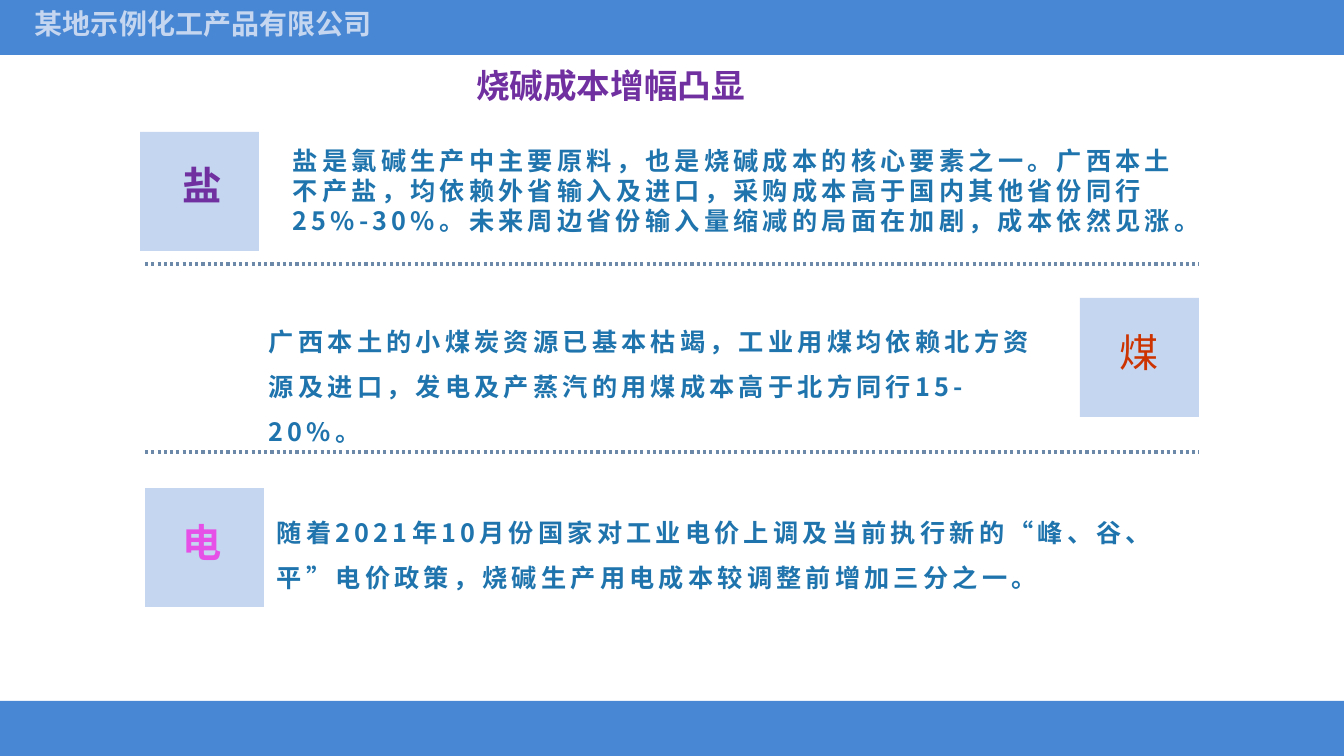
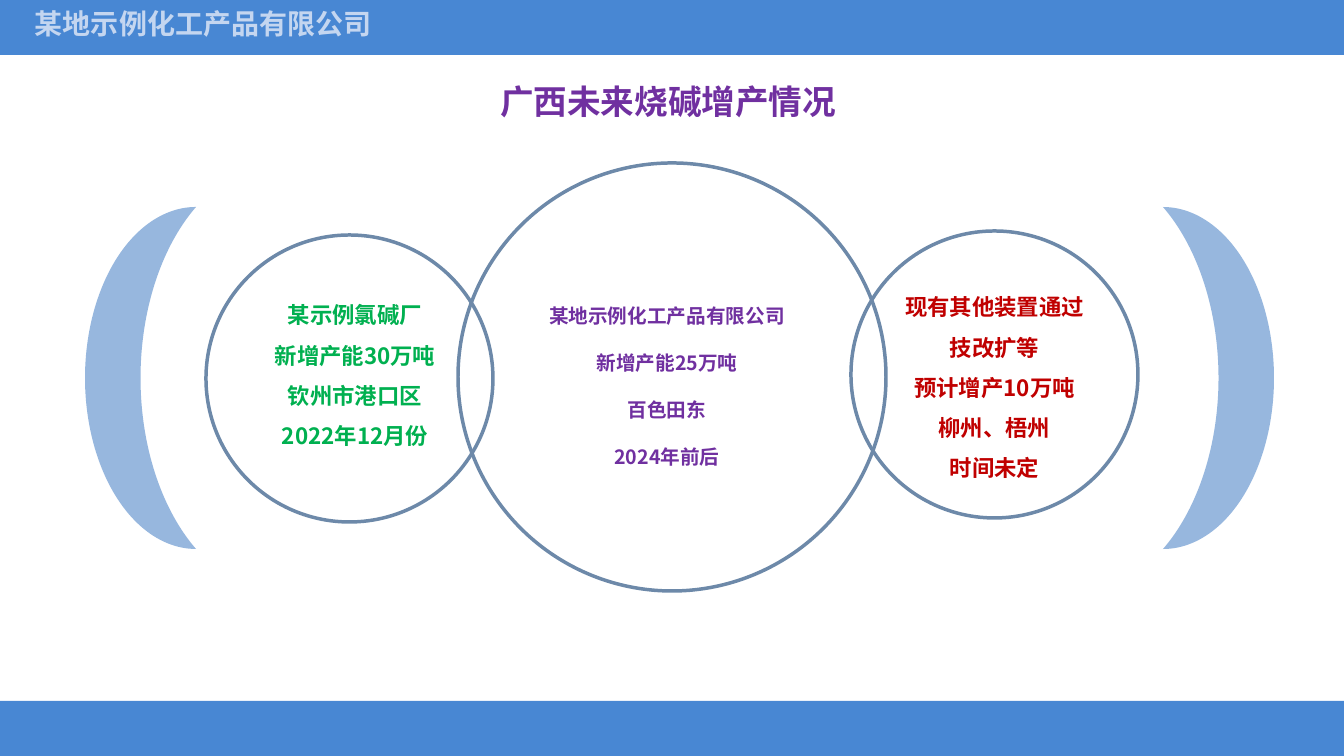
from dataclasses import dataclass

from lxml import etree
from pptx import Presentation
from pptx.dml.color import RGBColor
from pptx.enum.dml import MSO_LINE
from pptx.enum.shapes import MSO_CONNECTOR, MSO_SHAPE
from pptx.enum.text import MSO_ANCHOR, MSO_AUTO_SIZE, PP_ALIGN
from pptx.oxml.ns import qn
from pptx.shapes.autoshape import Shape
from pptx.slide import Slide
from pptx.util import Emu, Pt

RECT, OVAL, MOON = MSO_SHAPE.RECTANGLE, MSO_SHAPE.OVAL, MSO_SHAPE.MOON
STRAIGHT = MSO_CONNECTOR.STRAIGHT
DOTTED = MSO_LINE.ROUND_DOT
LEFT, CENTER = PP_ALIGN.LEFT, PP_ALIGN.CENTER
TOP = MSO_ANCHOR.TOP
GROW = MSO_AUTO_SIZE.SHAPE_TO_FIT_TEXT

EMU_PER_PX = 914400 / 100.8
SLIDE_W, SLIDE_H, BAND_H = 1344, 756, 55
TITLE_ONLY = 5
FONT = "Noto Sans CJK SC"
COMPANY = "某地示例化工产品有限公司"
COLORS = {
    "band": "4887D3",
    "pale": "C4D6F0",
    "moon": "97B7DE",
    "outline": "6D89A9",
    "body": "1F74AD",
    "purple": "7030A0",
    "orange": "CC3300",
    "pink": "E650E6",
    "green": "00B050",
    "red": "C00000",
}


@dataclass(frozen=True)
class Box:
    left: int
    top: int
    width: int
    height: int

    def emu(self) -> tuple[Emu, Emu, Emu, Emu]:
        return px(self.left), px(self.top), px(self.width), px(self.height)


@dataclass(frozen=True)
class TextStyle:
    size: int
    color: str
    bold: bool = True
    align: PP_ALIGN = LEFT
    line_spacing: float = 1.0
    tracking: int = 0  # points between characters


@dataclass(frozen=True)
class CostFactor:
    square: tuple[int, int]
    label: str
    label_at: tuple[int, int]
    label_style: TextStyle
    text: str
    text_box: Box
    line_spacing: float


@dataclass(frozen=True)
class Expansion:
    circle: Box
    lines: tuple[str, ...]
    text_box: Box
    style: TextStyle


TITLE_STYLE = TextStyle(24, "purple")
HEADER_STYLE = TextStyle(20, "pale")
SQUARE_SIZE = 119
DIVIDER_LEFT, DIVIDER_RIGHT = 145, 1199
DIVIDER_TOPS = (264, 452)
MOON_LEFTS = (85, 1163)

COST_FACTORS = (
    CostFactor(
        (140, 132), "盐", (156, 156), TextStyle(28, "purple", align=CENTER),
        "盐是氯碱生产中主要原料，也是烧碱成本的核心要素之一。广西本土不产盐，"
        "均依赖外省输入及进口，采购成本高于国内其他省份同行25%-30%。"
        "未来周边省份输入量缩减的局面在加剧，成本依然见涨。",
        Box(283, 140, 913, 102), 1.0),
    CostFactor(
        (1080, 298), "煤", (1093, 323),
        TextStyle(28, "orange", bold=False, align=CENTER),
        "广西本土的小煤炭资源已基本枯竭，工业用煤均依赖北方资源及进口，"
        "发电及产蒸汽的用煤成本高于北方同行15-20%。",
        Box(259, 306, 804, 95), 1.5),
    CostFactor(
        (145, 488), "电", (156, 513), TextStyle(28, "pink", align=CENTER),
        "随着2021年10月份国家对工业电价上调及当前执行新的“峰、谷、平”电价政策，"
        "烧碱生产用电成本较调整前增加三分之一。",
        Box(267, 497, 913, 102), 1.5),
)

EXPANSIONS = (
    Expansion(
        Box(458, 163, 428, 428),
        (COMPANY, "新增产能25万吨", "百色田东", "2024年前后"),
        Box(513, 275, 308, 201), TextStyle(14, "purple", True, CENTER, 2.0)),
    Expansion(
        Box(206, 235, 287, 287),
        ("某示例氯碱厂", "新增产能30万吨", "钦州市港口区", "2022年12月份"),
        Box(236, 283, 238, 201), TextStyle(16, "green", True, CENTER, 1.5)),
    Expansion(
        Box(851, 231, 287, 287),
        ("现有其他装置通过技改扩等", "预计增产10万吨", "柳州、梧州", "时间未定"),
        Box(894, 275, 201, 209), TextStyle(16, "red", True, CENTER, 1.5)),
)


def px(length: int) -> Emu:
    return Emu(round(length * EMU_PER_PX))


def rgb(name: str) -> RGBColor:
    return RGBColor.from_string(COLORS[name])


def write_text(shape: Shape, text: str, style: TextStyle) -> None:
    frame = shape.text_frame
    frame.text = text
    frame.word_wrap = True
    frame.auto_size = GROW
    frame.vertical_anchor = TOP
    for paragraph in frame.paragraphs:
        paragraph.alignment = style.align
        paragraph.line_spacing = style.line_spacing
        for run in paragraph.runs:
            font = run.font
            font.size, font.bold, font.name = Pt(style.size), style.bold, FONT
            font.color.rgb = rgb(style.color)
            # East Asian typeface and letter spacing
            properties = run._r.get_or_add_rPr()
            etree.SubElement(properties, qn("a:ea")).set("typeface", FONT)
            if style.tracking:
                properties.set("spc", str(style.tracking * 100))


def add_text(slide: Slide, box: Box, text: str, style: TextStyle) -> None:
    write_text(slide.shapes.add_textbox(*box.emu()), text, style)


def add_filled(slide: Slide, preset: MSO_SHAPE, box: Box, color: str) -> Shape:
    shape = slide.shapes.add_shape(preset, *box.emu())
    shape.shadow.inherit = False
    shape.fill.solid()
    shape.fill.fore_color.rgb = rgb(color)
    shape.line.fill.background()
    return shape


def add_ring(slide: Slide, box: Box) -> None:
    ring = slide.shapes.add_shape(OVAL, *box.emu())
    ring.shadow.inherit = False
    ring.fill.background()
    ring.line.color.rgb = rgb("outline")
    ring.line.width = Pt(2.5)


def add_divider(slide: Slide, top: int) -> None:
    divider = slide.shapes.add_connector(
        STRAIGHT, px(DIVIDER_LEFT), px(top), px(DIVIDER_RIGHT), px(top))
    divider.line.color.rgb = rgb("outline")
    divider.line.width = Pt(2.25)
    divider.line.dash_style = DOTTED
    etree.SubElement(divider._element.spPr, qn("a:effectLst"))


def add_page(prs: Presentation, title: str, title_box: Box) -> Slide:
    """Add a slide with the shared bands, company header and title."""
    slide = prs.slides.add_slide(prs.slide_layouts[TITLE_ONLY])
    for top in (0, SLIDE_H - BAND_H):
        add_filled(slide, RECT, Box(0, top, SLIDE_W, BAND_H), "band")
    add_text(slide, Box(25, 2, 440, 44), COMPANY, HEADER_STYLE)
    heading = slide.shapes.title
    heading.left, heading.top, heading.width, heading.height = title_box.emu()
    write_text(heading, title, TITLE_STYLE)
    return slide


def build_cost_slide(prs: Presentation) -> None:
    slide = add_page(prs, "烧碱成本增幅凸显", Box(466, 60, 301, 50))
    for top in DIVIDER_TOPS:
        add_divider(slide, top)
    for factor in COST_FACTORS:
        add_filled(slide, RECT, Box(*factor.square, SQUARE_SIZE, SQUARE_SIZE), "pale")
        add_text(slide, Box(*factor.label_at, 92, 57), factor.label, factor.label_style)
        body_style = TextStyle(
            18, "body", line_spacing=factor.line_spacing, tracking=3)
        add_text(slide, factor.text_box, factor.text, body_style)


def build_expansion_slide(prs: Presentation) -> None:
    slide = add_page(prs, "广西未来烧碱增产情况", Box(490, 76, 427, 50))
    for expansion in EXPANSIONS:
        add_ring(slide, expansion.circle)
        add_text(slide, expansion.text_box, "\n".join(expansion.lines), expansion.style)
    # Crescents facing each other
    for index, left in enumerate(MOON_LEFTS):
        crescent = add_filled(slide, MOON, Box(left, 207, 111, 342), "moon")
        crescent.rotation = 180 * index


def main() -> None:
    prs = Presentation()
    prs.slide_width, prs.slide_height = px(SLIDE_W), px(SLIDE_H)
    build_cost_slide(prs)
    build_expansion_slide(prs)
    prs.save("out.pptx")


if __name__ == "__main__":
    main()
